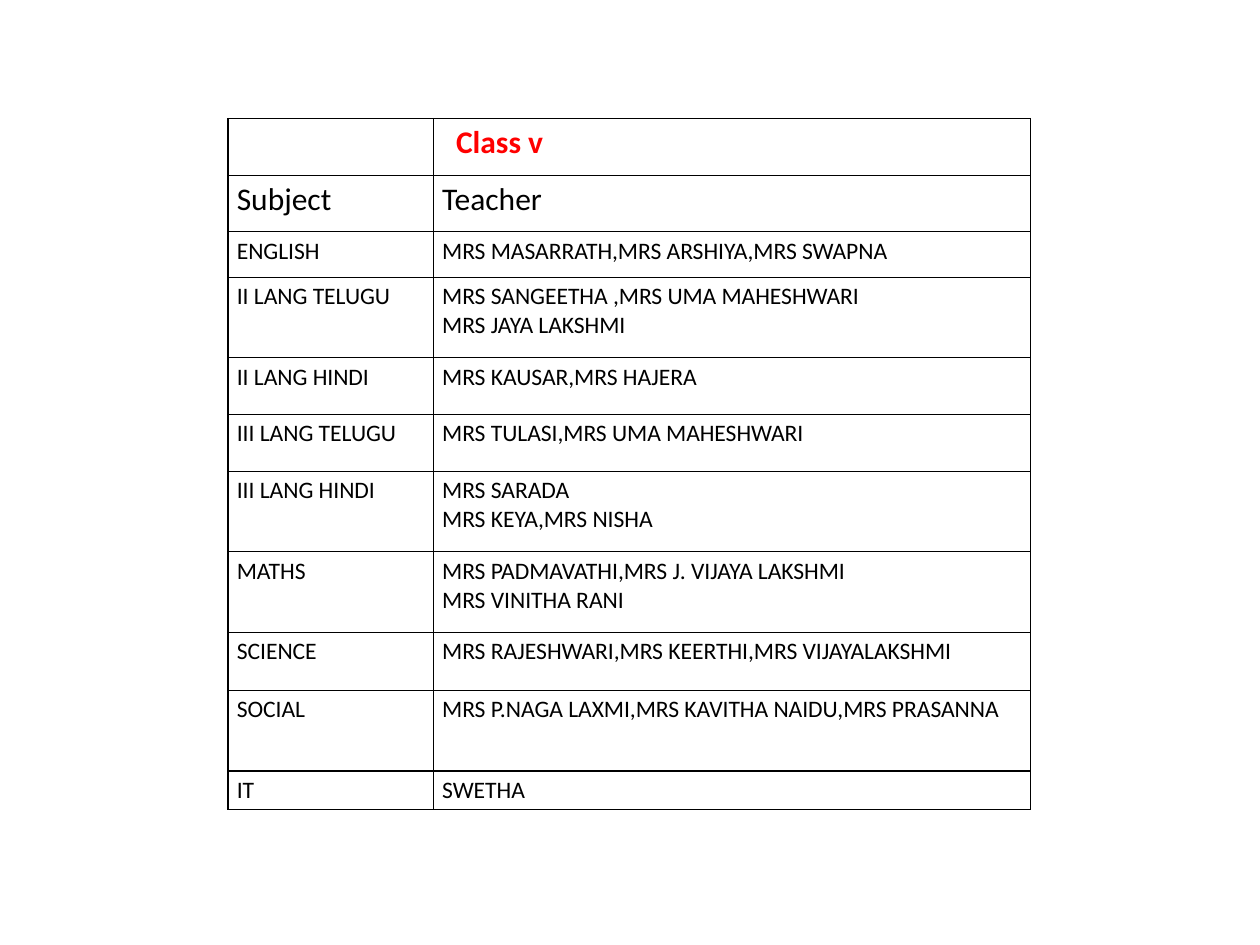
from lxml.etree import SubElement
from pptx import Presentation
from pptx.dml.color import RGBColor
from pptx.oxml.ns import qn
from pptx.util import Inches, Pt

COLORS = {"text": "000000", "heading": "FF0000", "paper": "FFFFFF", "border": "000000"}

# Row height, subject, teachers
HEADINGS = [
    (0.45, "", "Class v"),
    (0.45, "Subject", "Teacher"),
]
SUBJECTS = [
    (0.36, "ENGLISH", "MRS MASARRATH,MRS ARSHIYA,MRS SWAPNA"),
    (0.64, "II LANG TELUGU", "MRS SANGEETHA ,MRS UMA MAHESHWARI\nMRS JAYA LAKSHMI"),
    (0.45, "II LANG HINDI", "MRS KAUSAR,MRS HAJERA"),
    (0.45, "III LANG TELUGU", "MRS TULASI,MRS UMA MAHESHWARI"),
    (0.64, "III LANG HINDI", "MRS SARADA\nMRS KEYA,MRS NISHA"),
    (0.64, "MATHS", "MRS PADMAVATHI,MRS J. VIJAYA LAKSHMI\nMRS VINITHA RANI"),
    (0.46, "SCIENCE", "MRS RAJESHWARI,MRS KEERTHI,MRS VIJAYALAKSHMI"),
    (0.64, "SOCIAL", "MRS P.NAGA LAXMI,MRS KAVITHA NAIDU,MRS PRASANNA"),
    (0.26, "IT", "SWETHA"),
]
COLUMN_WIDTHS = (1.63, 4.74)


class SlideBuilder:
    font = "Calibri"
    heading_size = 18
    body_size = 13.5
    border_width = 0.75

    def __init__(self, slide):
        self.slide = slide

    def table(self, left, top, widths, heights):
        table = self.slide.shapes.add_table(
            len(heights), len(widths), Inches(left), Inches(top),
            Inches(sum(widths)), Inches(sum(heights))).table
        table.first_row = table.horz_banding = False
        for column, width in zip(table.columns, widths):
            column.width = Inches(width)
        for row, height in zip(table.rows, heights):
            row.height = Inches(height)
        return table

    def borders(self, cell):
        properties = cell._tc.get_or_add_tcPr()
        for side in ("a:lnL", "a:lnR", "a:lnT", "a:lnB"):
            line = SubElement(properties, qn(side), w=str(Pt(self.border_width)))
            fill = SubElement(line, qn("a:solidFill"))
            SubElement(fill, qn("a:srgbClr"), val=COLORS["border"])

    def cell(self, cell, text, size, color="text", bold=False, indent=0):
        self.borders(cell)
        cell.fill.solid()
        cell.fill.fore_color.rgb = RGBColor.from_string(COLORS["paper"])
        cell.margin_left = Inches(0.07 + indent)
        cell.margin_right = Inches(0.07)
        cell.margin_top = cell.margin_bottom = Inches(0.04)
        cell.text_frame.text = text
        for paragraph in cell.text_frame.paragraphs:
            for run in paragraph.runs:
                run.font.name = self.font
                run.font.size = Pt(size)
                run.font.bold = bold
                run.font.color.rgb = RGBColor.from_string(COLORS[color])


def main():
    presentation = Presentation()
    presentation.slide_width, presentation.slide_height = Inches(10), Inches(7.5)
    builder = SlideBuilder(presentation.slides.add_slide(presentation.slide_layouts[6]))

    # Teacher list
    rows = HEADINGS + SUBJECTS
    teacher_list = builder.table(1.81, 0.94, COLUMN_WIDTHS, [row[0] for row in rows])
    for index, (_, subject, teachers) in enumerate(rows):
        size = builder.heading_size if index < len(HEADINGS) else builder.body_size
        # The class name stands out in the first row
        accent = {"color": "heading", "bold": True, "indent": 0.11} if index == 0 else {}
        builder.cell(teacher_list.cell(index, 0), subject, size)
        builder.cell(teacher_list.cell(index, 1), teachers, size, **accent)

    presentation.save("out.pptx")


if __name__ == "__main__":
    main()
